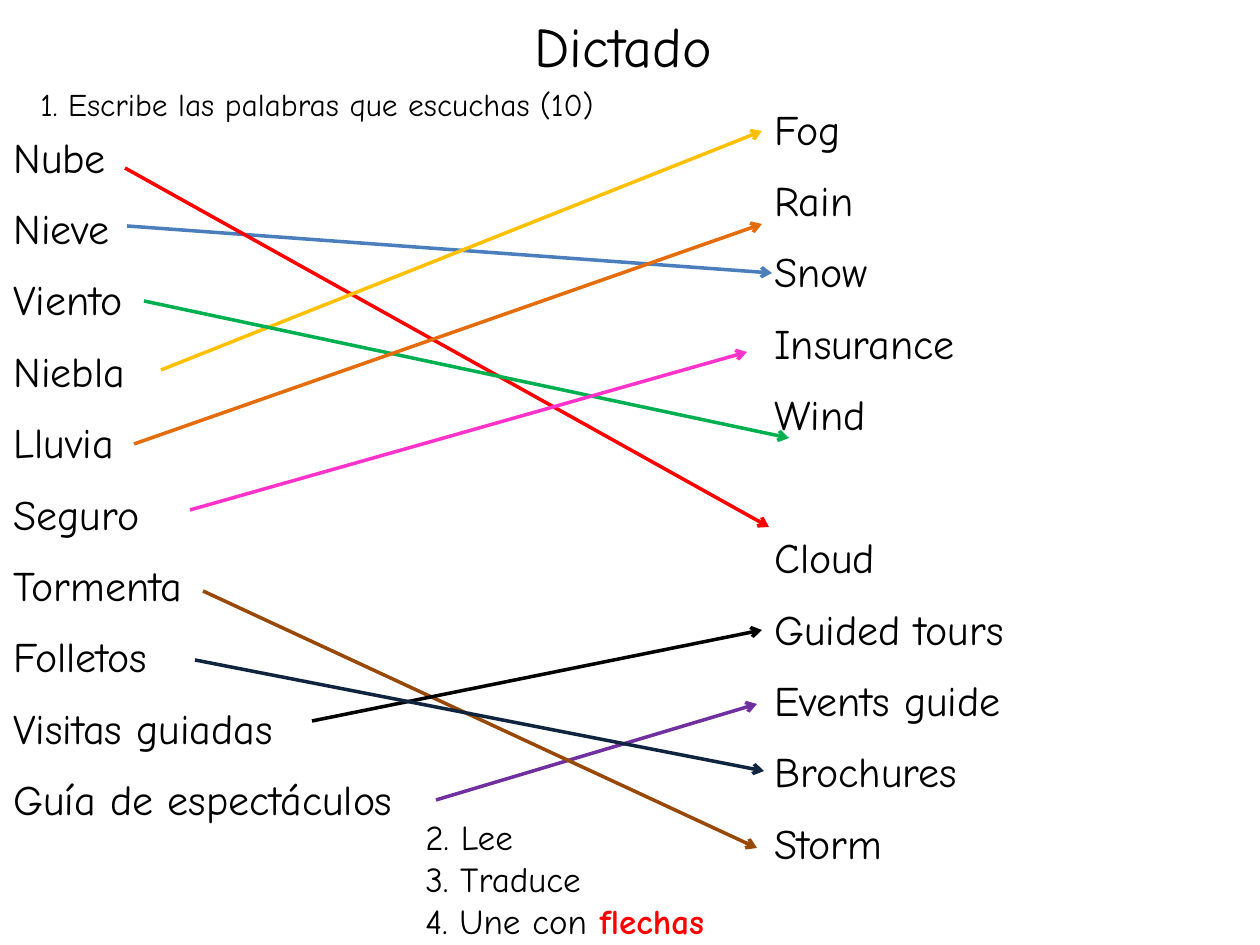
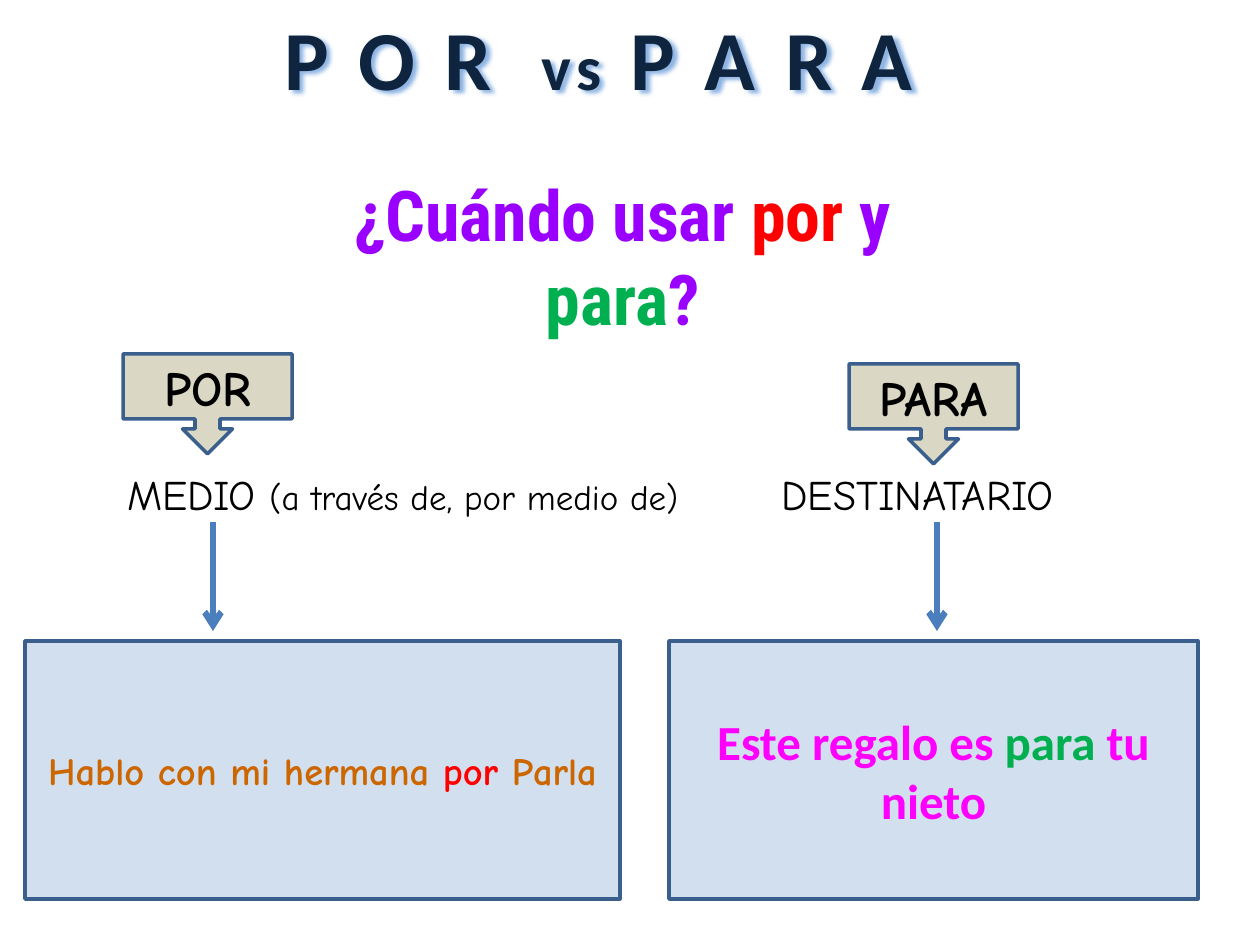
from dataclasses import dataclass

from lxml import etree
from pptx import Presentation
from pptx.dml.color import RGBColor
from pptx.enum.shapes import MSO_CONNECTOR, MSO_SHAPE
from pptx.enum.text import MSO_ANCHOR, PP_ALIGN
from pptx.oxml.ns import qn
from pptx.util import Emu, Pt

EMU_PER_PX = 914400 / 126
BLANK = 6
LEFT, CENTER = PP_ALIGN.LEFT, PP_ALIGN.CENTER
MIDDLE = MSO_ANCHOR.MIDDLE
STRAIGHT = MSO_CONNECTOR.STRAIGHT
RECT, CALLOUT = MSO_SHAPE.RECTANGLE, MSO_SHAPE.DOWN_ARROW_CALLOUT

BLACK = RGBColor(0x00, 0x00, 0x00)
RED = RGBColor(0xFF, 0x00, 0x00)
GREEN = RGBColor(0x00, 0xB0, 0x50)
GOLD = RGBColor(0xFF, 0xC0, 0x00)
ORANGE = RGBColor(0xE4, 0x6C, 0x0A)
PINK = RGBColor(0xFF, 0x33, 0xCC)
PURPLE = RGBColor(0x70, 0x30, 0xA0)
BROWN = RGBColor(0x98, 0x48, 0x07)
NAVY = RGBColor(0x0F, 0x24, 0x3E)
BLUE = RGBColor(0x4B, 0x7E, 0xBC)
BORDER = RGBColor(0x3A, 0x5F, 0x8C)
BOX_BLUE = RGBColor(0x4F, 0x81, 0xBD)
KHAKI = RGBColor(0x94, 0x8A, 0x54)
VIOLET = RGBColor(0x99, 0x00, 0xFF)
MAGENTA = RGBColor(0xFF, 0x00, 0xFF)
COPPER = RGBColor(0xCC, 0x66, 0x00)
HALO = RGBColor(0x8E, 0xB4, 0xE3)

COMIC, CALIBRI, ROBOTO = "Comic Neue", "Calibri", "Roboto Condensed"
ROW_PITCH = 41


@dataclass(frozen=True)
class Run:
    text: str
    size: int
    color: RGBColor = BLACK
    bold: bool = False
    font: str = COMIC


@dataclass(frozen=True)
class Box:
    x: int
    y: int
    w: int
    h: int


@dataclass(frozen=True)
class Arrow:
    x1: int
    y1: int
    x2: int
    y2: int
    color: RGBColor
    width: float = 2


@dataclass(frozen=True)
class Panel:
    box: Box
    kind: int
    fill: RGBColor
    opacity: int
    runs: list[Run]


def px(*lengths: int) -> list[Emu]:
    return [Emu(round(n * EMU_PER_PX)) for n in lengths]


def set_all(target, values: dict) -> None:
    for name, value in values.items():
        setattr(target, name, value)


def write(tf, lines: list[list[Run]], align=LEFT, **spacing) -> None:
    tf.word_wrap = True
    for i, runs in enumerate(lines):
        p = tf.paragraphs[0] if i == 0 else tf.add_paragraph()
        set_all(p, {"alignment": align, **spacing})
        for run in runs:
            r = p.add_run()
            r.text = run.text
            set_all(r.font, {"name": run.font, "size": Pt(run.size), "bold": run.bold})
            r.font.color.rgb = run.color


def add_text(slide, box: Box, lines: list[list[Run]], align=LEFT, **spacing):
    sp = slide.shapes.add_textbox(*px(box.x, box.y, box.w, box.h))
    write(sp.text_frame, lines, align, **spacing)
    return sp


def add_arrow(slide, a: Arrow) -> None:
    sp = slide.shapes.add_connector(STRAIGHT, *px(a.x1, a.y1, a.x2, a.y2))
    sp.line.color.rgb = a.color
    sp.line.width = Pt(a.width)
    etree.SubElement(sp.line._get_or_add_ln(), qn("a:tailEnd"), type="arrow")
    etree.SubElement(sp._element.spPr, qn("a:effectLst"))


def add_panel(slide, panel: Panel) -> None:
    b = panel.box
    sp = slide.shapes.add_shape(panel.kind, *px(b.x, b.y, b.w, b.h))
    sp.shadow.inherit = False
    sp.fill.solid()
    sp.fill.fore_color.rgb = panel.fill
    color = sp._element.spPr.find(qn("a:solidFill"))[0]
    etree.SubElement(color, qn("a:alpha"), val=str(panel.opacity * 1000))
    sp.line.color.rgb = BORDER
    sp.line.width = Pt(2)
    sp.text_frame.vertical_anchor = MIDDLE
    write(sp.text_frame, [panel.runs], CENTER)


def add_halo(sp) -> None:
    """Spread the letters of a title and give them a soft coloured shadow."""
    for r in sp.text_frame.paragraphs[0].runs:
        r.font._element.set("spc", "300")
    effects = etree.SubElement(sp._element.spPr, qn("a:effectLst"))
    shadow = etree.SubElement(effects, qn("a:outerShdw"), blurRad="25400",
                              dist="25400", dir="1800000", algn="tl", rotWithShape="0")
    etree.SubElement(shadow, qn("a:srgbClr"), val=str(HALO))


SPANISH = ["Nube", "Nieve", "Viento", "Niebla", "Lluvia", "Seguro", "Tormenta",
           "Folletos", "Visitas guiadas", "Guía de espectáculos"]
ENGLISH = ["Fog", "Rain", "Snow", "Insurance", "Wind", "Cloud", "Guided tours",
           "Events guide", "Brochures", "Storm"]
MATCHES = [
    Arrow(127, 226, 772, 273, BLUE),
    Arrow(125, 168, 769, 527, RED),
    Arrow(161, 370, 762, 131, GOLD),
    Arrow(144, 301, 789, 438, GREEN),
    Arrow(436, 800, 757, 704, PURPLE),
    Arrow(190, 510, 747, 352, PINK),
    Arrow(134, 444, 762, 224, ORANGE),
    Arrow(203, 591, 757, 848, BROWN),
    Arrow(312, 721, 762, 630, BLACK),
    Arrow(195, 660, 764, 771, NAVY),
]


def build_dictation(slide) -> None:
    add_text(slide, Box(522, 5, 226, 83), [[Run("Dictado", 32)]])
    add_text(slide, Box(1, 125, 450, 857), [[Run(w, 24)] for w in SPANISH],
             space_after=Pt(12))
    english = add_text(slide, Box(762, 97, 451, 785), [[Run(w, 24)] for w in ENGLISH],
                       space_after=Pt(12))
    cloud = english.text_frame.paragraphs[ENGLISH.index("Cloud")]
    cloud.space_before = Pt(ROW_PITCH)
    add_text(slide, Box(28, 79, 621, 50),
             [[Run("1. Escribe las palabras que escuchas (10)", 18)]])
    for match in MATCHES:
        add_arrow(slide, match)
    add_text(slide, Box(413, 809, 349, 178),
             [[Run("2. Lee", 20)], [Run("3. Traduce", 20)],
              [Run("4. Une con", 20), Run(" flechas", 20, RED, True)]])


def build_por_para(slide) -> None:
    def title(text: str, size: int) -> Run:
        return Run(text, size, NAVY, True, CALIBRI)

    def question(text: str, color: RGBColor = VIOLET) -> Run:
        return Run(text, 40, color, True, ROBOTO)

    def medium(text: str, color: RGBColor = COPPER) -> Run:
        return Run(text, 22, color, True)

    def recipient(text: str, color: RGBColor = MAGENTA) -> Run:
        return Run(text, 28, color, True, CALIBRI)

    add_halo(add_text(slide, Box(249, 0, 700, 115),
                      [[title("P O R ", 48), title(" vs", 36), title(" P A R A", 48)]],
                      CENTER))
    add_text(slide, Box(312, 165, 621, 97),
             [[question("¿Cuándo usar "), question("por", RED), question(" y "),
               question("para", GREEN), question("?")]], CENTER)
    add_text(slide, Box(115, 462, 634, 63),
             [[Run("MEDIO ", 24), Run("(a través de, por medio de)", 20)]])
    add_text(slide, Box(769, 462, 373, 63), [[Run("DESTINATARIO", 24)]])

    for text, x, y in (("POR", 123, 354), ("PARA", 849, 364)):
        add_panel(slide, Panel(Box(x, y, 169, 100), CALLOUT, KHAKI, 34,
                               [Run(text, 28, bold=True)]))
    for x in (213, 937):
        add_arrow(slide, Arrow(x, 522, x, 631, BLUE, 3.5))

    examples = (
        (25, 595, [medium("Hablo con mi hermana "), medium("por", RED), medium(" Parla")]),
        (669, 529, [recipient("Este regalo es "), recipient("para ", GREEN),
                    recipient("tu nieto")]),
    )
    for x, w, runs in examples:
        add_panel(slide, Panel(Box(x, 641, w, 258), RECT, BOX_BLUE, 25, runs))


def main() -> None:
    prs = Presentation()
    prs.slide_width, prs.slide_height = px(1260, 945)
    for build in (build_dictation, build_por_para):
        build(prs.slides.add_slide(prs.slide_layouts[BLANK]))
    prs.save("out.pptx")


if __name__ == "__main__":
    main()
